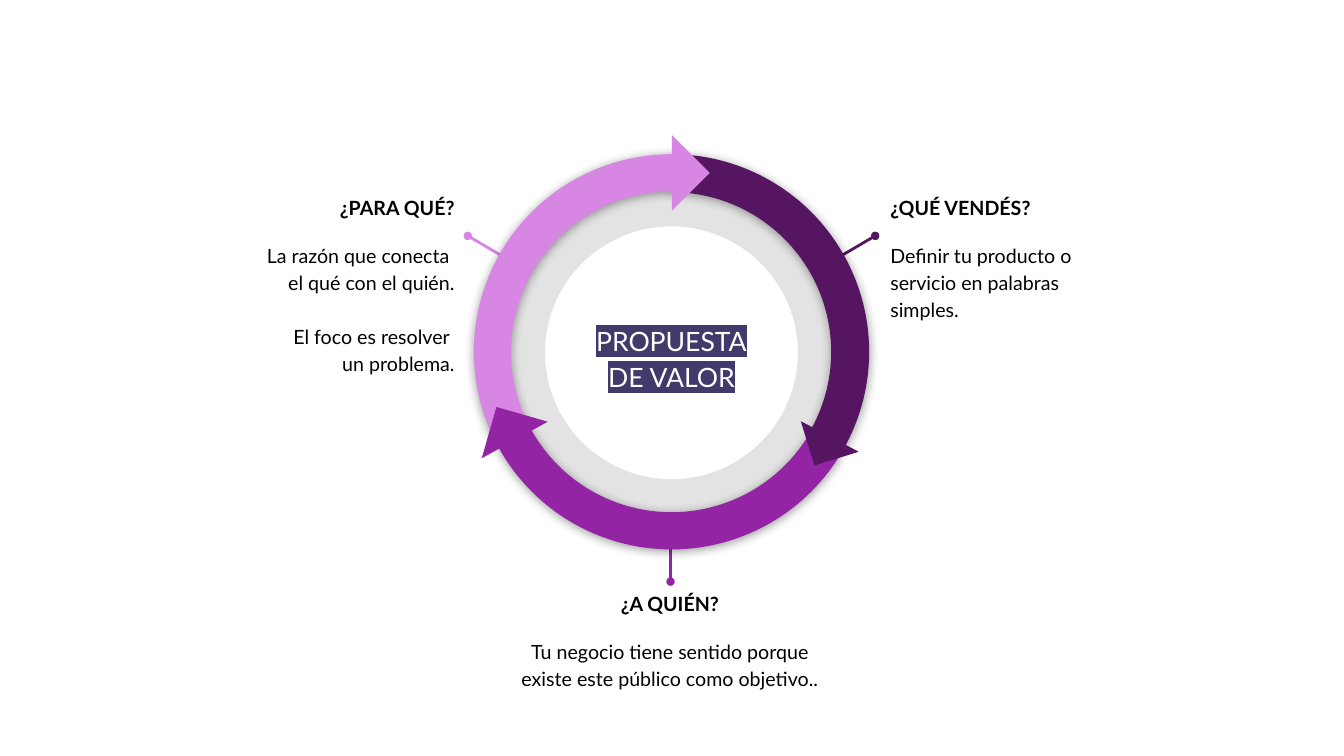
from lxml.etree import SubElement
from pptx import Presentation
from pptx.dml.color import RGBColor
from pptx.enum.shapes import MSO_CONNECTOR, MSO_SHAPE
from pptx.enum.text import MSO_ANCHOR, MSO_AUTO_SIZE, PP_ALIGN
from pptx.oxml.ns import qn
from pptx.util import Inches, Pt

BLACK = RGBColor(0x00, 0x00, 0x00)
WHITE = RGBColor(0xFF, 0xFF, 0xFF)
INDIGO = RGBColor(0x41, 0x3A, 0x6B)
PINK = RGBColor(0xD7, 0x86, 0xE4)
PLUM = RGBColor(0x56, 0x15, 0x61)
PURPLE = RGBColor(0x93, 0x25, 0xA5)


def add_color(parent, color, alpha=None):
    element = SubElement(parent, qn("a:srgbClr"), val=str(color))
    if alpha is not None:
        SubElement(element, qn("a:alpha"), val=str(alpha * 1000))


class CycleSlide:
    font_name = "Lato"
    line_spacing = 1.15
    margin = Inches(0.13)

    def __init__(self, presentation):
        self.slide = presentation.slides.add_slide(presentation.slide_layouts[5])
        self.shapes = self.slide.shapes

    def add_filled_shape(self, kind, box, color, rotation=0, adjustments=()):
        shape = self.shapes.add_shape(kind, *map(Inches, box))
        shape.shadow.inherit = False
        shape.fill.solid()
        shape.fill.fore_color.rgb = color
        shape.line.fill.background()
        shape.rotation = rotation
        for index, value in enumerate(adjustments):
            shape.adjustments[index] = value
        return shape

    def add_base_ring(self, box):
        ring = self.add_filled_shape(MSO_SHAPE.DONUT, box, BLACK, adjustments=[0.161])
        color = ring._element.spPr.find(qn("a:solidFill"))[0]
        SubElement(color, qn("a:alpha"), val="11000")

    def add_arc(self, color, rotation, adjustments, flipped):
        arc = self.add_filled_shape(MSO_SHAPE.BLOCK_ARC, (4.7, 1.53, 3.92, 3.92),
                                    color, rotation, adjustments)
        properties = arc._element.spPr
        if flipped:
            properties.find(qn("a:xfrm")).set("flipH", "1")
        shadow = SubElement(properties.find(qn("a:effectLst")), qn("a:outerShdw"),
                            blurRad=str(Pt(7.5)), dist=str(Pt(1)),
                            dir="5400000", algn="bl", rotWithShape="0")
        add_color(shadow, BLACK, 40)

    def add_arrowhead(self, left, top, size, rotation, color):
        self.add_filled_shape(MSO_SHAPE.RIGHT_TRIANGLE, (left, top, size, size),
                              color, rotation)

    def add_pointer(self, start, end, color):
        """Draw a line with a round dot at its start."""
        pointer = self.shapes.add_connector(MSO_CONNECTOR.STRAIGHT,
                                            *map(Inches, start + end))
        pointer.line.color.rgb = color
        pointer.line.width = Pt(2)
        SubElement(pointer.line._get_or_add_ln(), qn("a:headEnd"), type="oval")
        SubElement(pointer._element.spPr, qn("a:effectLst"))

    def prepare_frame(self, shape, anchor):
        frame = shape.text_frame
        frame.word_wrap = True
        frame.auto_size = MSO_AUTO_SIZE.NONE
        frame.vertical_anchor = anchor
        frame.margin_left = frame.margin_right = self.margin
        frame.margin_top = frame.margin_bottom = self.margin
        return frame

    def format_paragraph(self, paragraph, size, color, alignment, bold=False):
        paragraph.alignment = alignment
        paragraph.line_spacing = self.line_spacing
        paragraph.font.name = self.font_name
        paragraph.font.size = Pt(size)
        paragraph.font.bold = bold
        paragraph.font.color.rgb = color

    def add_question(self, box, alignment, heading, *answers):
        textbox = self.shapes.add_textbox(*map(Inches, box))
        frame = self.prepare_frame(textbox, MSO_ANCHOR.TOP)
        for index, text in enumerate((heading, *answers)):
            paragraph = frame.add_paragraph() if index else frame.paragraphs[0]
            paragraph.text = text
            if index:
                paragraph.space_before = Pt(15 if index == 1 else 19)
            self.format_paragraph(paragraph, 14, BLACK, alignment, bold=index == 0)

    def set_title(self, box, text):
        title = self.shapes.title
        title.left, title.top, title.width, title.height = map(Inches, box)
        frame = self.prepare_frame(title, MSO_ANCHOR.MIDDLE)
        frame.text = text
        for paragraph in frame.paragraphs:
            self.format_paragraph(paragraph, 19, WHITE, PP_ALIGN.CENTER)
            for run in paragraph.runs:
                highlight = SubElement(run._r.get_or_add_rPr(), qn("a:highlight"))
                add_color(highlight, INDIGO)


def main():
    presentation = Presentation()
    presentation.slide_width = Inches(13.33)
    presentation.slide_height = Inches(7.5)
    cycle = CycleSlide(presentation)

    cycle.set_title((5.61, 2.95, 2.1, 1.17), "PROPUESTA\nDE VALOR")
    cycle.add_base_ring((4.81, 1.65, 3.7, 3.7))

    cycle.add_pointer((4.64, 2.34), (5.27, 2.71), PINK)
    cycle.add_pointer((8.68, 2.34), (8.05, 2.71), PLUM)
    cycle.add_pointer((6.65, 5.77), (6.65, 5.1), PURPLE)

    cycle.add_question((2.46, 1.78, 2.18, 1.67), PP_ALIGN.RIGHT, "¿PARA QUÉ?",
                       "La razón que conecta \vel qué con el quién.",
                       "El foco es resolver \vun problema.")
    cycle.add_question((8.7, 1.78, 2.18, 0.98), PP_ALIGN.LEFT, "¿QUÉ VENDÉS?",
                       "Definir tu producto o servicio en palabras simples.")
    cycle.add_question((4.98, 5.71, 3.33, 0.98), PP_ALIGN.CENTER, "¿A QUIÉN?",
                       "Tu negocio tiene sentido porque existe este público como objetivo..")

    cycle.add_arc(PLUM, 30, (144.144, 0.007, 0.096), flipped=False)
    cycle.add_arc(PINK, 330, (143.486, 214.729, 0.094), flipped=True)
    cycle.add_arrowhead(6.4, 1.45, 0.53, 225, PINK)
    cycle.add_arc(PURPLE, 210, (143.162, 215.027, 0.094), flipped=True)
    cycle.add_arrowhead(8, 4.1, 0.46, 342.9, PLUM)
    cycle.add_arrowhead(4.84, 4.1, 0.53, 106, PURPLE)

    presentation.save("out.pptx")


if __name__ == "__main__":
    main()
